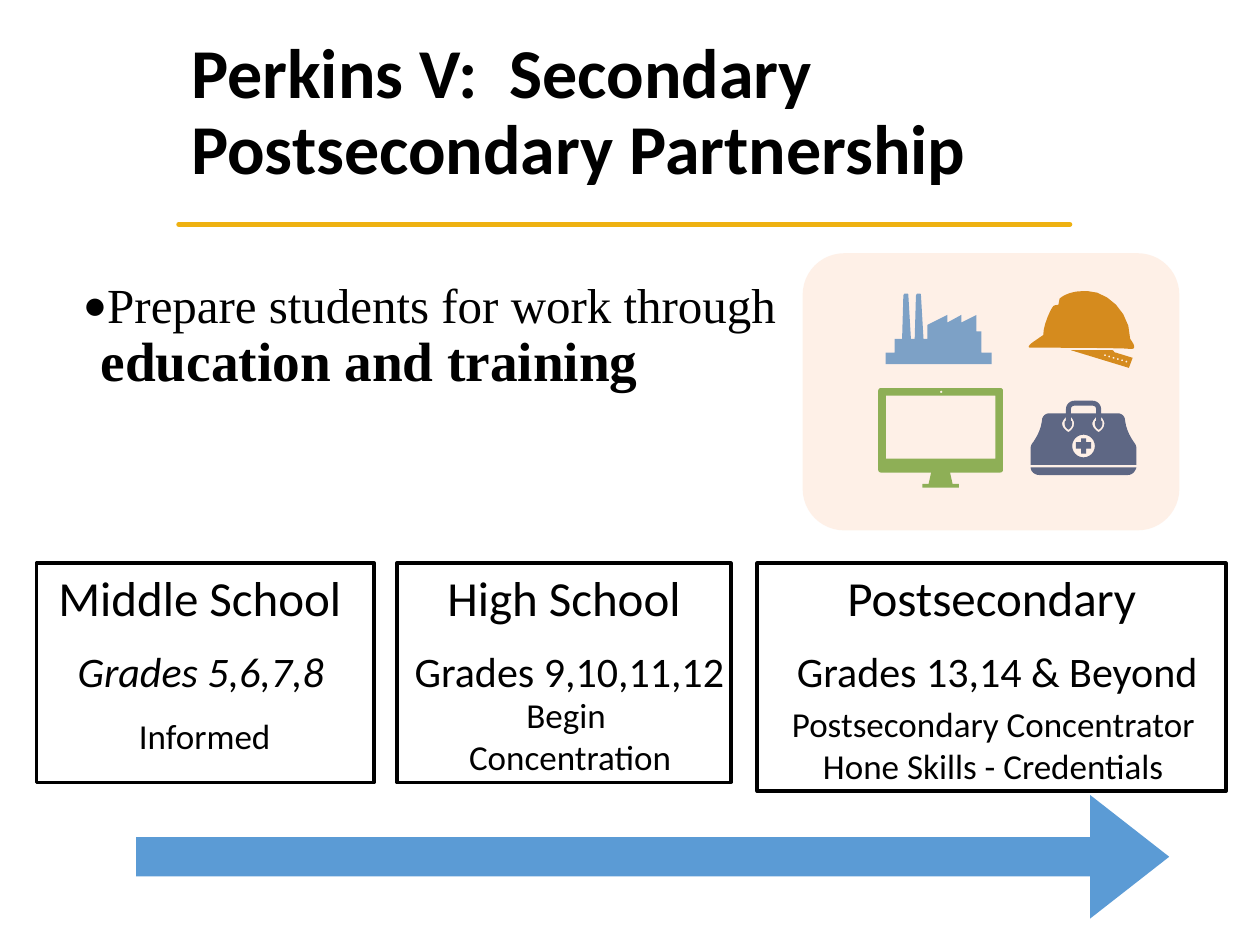
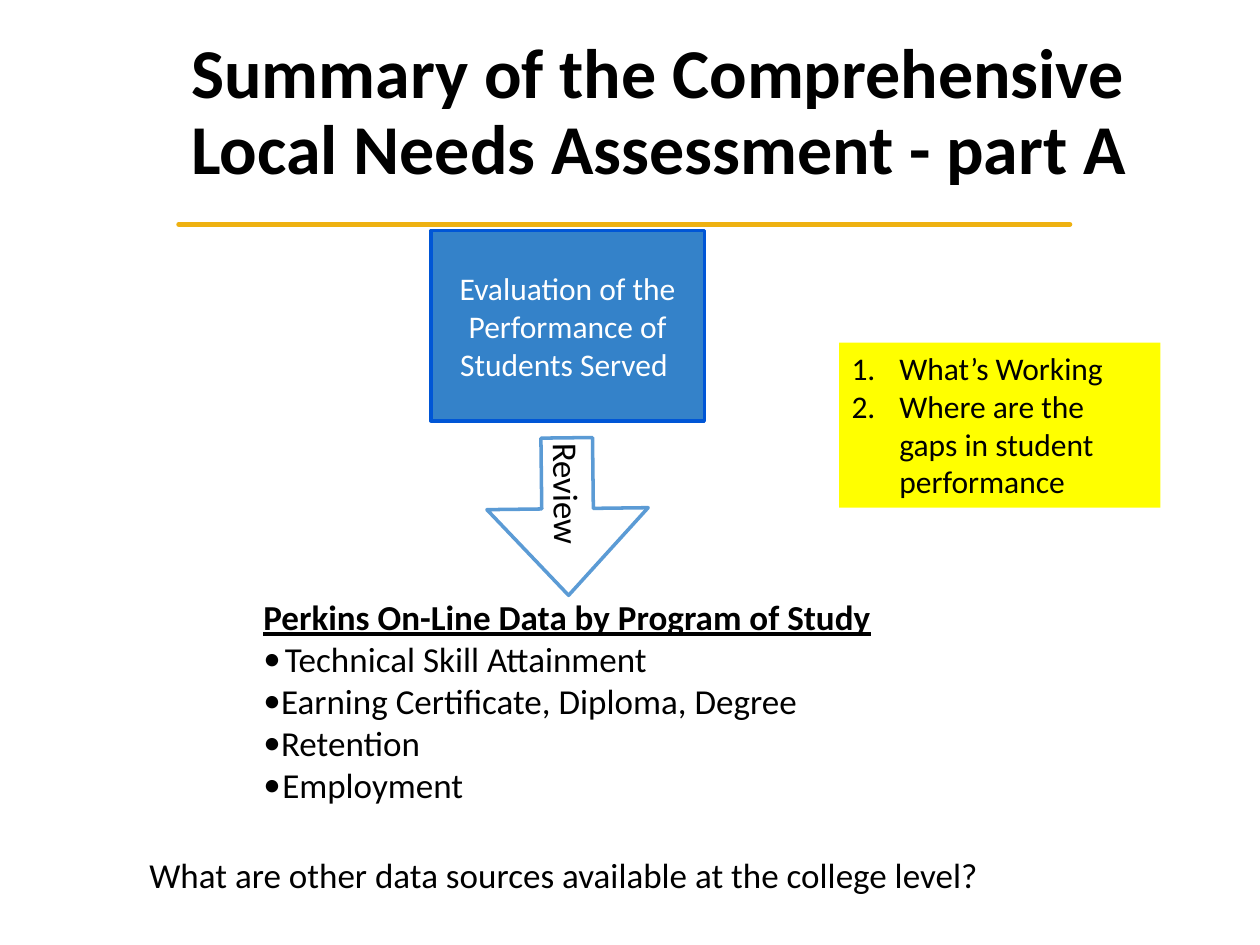
from dataclasses import dataclass
from math import cos, pi, sin
from typing import NamedTuple

from lxml.etree import SubElement
from pptx import Presentation
from pptx.dml.color import RGBColor
from pptx.enum.shapes import MSO_CONNECTOR as Connector, MSO_SHAPE as Preset
from pptx.enum.text import MSO_ANCHOR as Anchor, MSO_AUTO_SIZE as AutoSize, PP_ALIGN as Align
from pptx.oxml.ns import qn
from pptx.util import Inches, Pt


@dataclass(frozen=True)
class Theme:
    sans: str = "Calibri"
    serif: str = "Times New Roman"
    black: str = "000000"
    white: str = "FFFFFF"
    gold: str = "EEB111"
    blue: str = "5B9BD5"
    card: str = "3482C9"
    card_edge: str = "0056D6"
    yellow: str = "FFFF00"
    peach: str = "FEBB92"
    navy: str = "345181"
    orange: str = "CB7F00"
    green: str = "70AD47"
    title: float = 40
    strong: float = 31.6
    heading: float = 28
    grades: float = 24
    body: float = 20
    note: float = 18


THEME = Theme()
TIGHT = 0.04


class Box(NamedTuple):
    left: float
    top: float
    width: float
    height: float


@dataclass(frozen=True)
class Span:
    text: str
    size: float = THEME.body
    bold: bool = False
    italic: bool = False
    underline: bool = False
    color: str = THEME.black
    font: str = THEME.sans


@dataclass(frozen=True)
class Para:
    spans: tuple[Span, ...]
    align: Align = Align.LEFT
    hanging: float = 0
    bullet: str = ""
    spacing: float | None = None


@dataclass(frozen=True)
class Stage:
    frame: Box
    name: str
    name_left: float
    name_width: float
    grades: tuple[Span, ...]
    grades_left: float
    grades_width: float
    goals: tuple[str, ...]
    goals_box: Box
    goals_wrap: bool = False


# A contour starts with a point; 2 numbers draw a line, 6 a Bézier curve (hundredths of an inch)
Contour = list[tuple[float, ...]]


@dataclass(frozen=True)
class Icon:
    color: str
    contours: list[Contour]


def place(box: Box) -> list:
    return [Inches(length) for length in box]


def centred(*lines: Span) -> list[Para]:
    return [Para((line,), Align.CENTER) for line in lines]


def write(frame, paras: list[Para], anchor=Anchor.MIDDLE, inset: float | None = TIGHT,
          wrap: bool = True, grow: bool = False) -> None:
    frame.word_wrap = wrap
    frame.auto_size = AutoSize.SHAPE_TO_FIT_TEXT if grow else AutoSize.NONE
    frame.vertical_anchor = anchor
    if inset is not None:
        frame.margin_left = frame.margin_right = Inches(inset)
        frame.margin_top = frame.margin_bottom = Inches(inset)
    for index, item in enumerate(paras):
        para = frame.paragraphs[0] if index == 0 else frame.add_paragraph()
        if item.bullet:
            props = para._p.get_or_add_pPr()
            props.set("marL", str(Inches(item.hanging)))
            props.set("indent", str(-Inches(item.hanging)))
            if item.bullet == "1.":
                SubElement(props, qn("a:buAutoNum"), type="arabicPeriod")
            else:
                SubElement(props, qn("a:buFont"), typeface=THEME.sans)
                SubElement(props, qn("a:buChar"), char=item.bullet)
        para.alignment = item.align
        if item.spacing:
            para.line_spacing = item.spacing
        for span in item.spans:
            run = para.add_run()
            run.text = span.text
            run.font.name, run.font.size = span.font, Pt(span.size)
            run.font.bold, run.font.italic = span.bold, span.italic
            run.font.underline = span.underline
            run.font.color.rgb = RGBColor.from_string(span.color)


def add_text(page, box: Box, paras: list[Para], **layout) -> None:
    write(page.shapes.add_textbox(*place(box)).text_frame, paras, **layout)


def paint(shape, fill: str = "", line: str = "") -> None:
    shape.shadow.inherit = False
    if fill:
        shape.fill.solid()
        shape.fill.fore_color.rgb = RGBColor.from_string(fill)
    else:
        shape.fill.background()
    if line:
        shape.line.color.rgb = RGBColor.from_string(line)
        shape.line.width = Pt(2)
    else:
        shape.line.fill.background()


def add_preset(page, preset: Preset, box: Box, fill: str = "", line: str = "",
               adjust: tuple[float, ...] = ()):
    shape = page.shapes.add_shape(preset, *place(box))
    for index, value in enumerate(adjust):
        shape.adjustments[index] = value
    paint(shape, fill, line)
    return shape


def flatten(contour: Contour, steps: int = 6) -> list[tuple[float, float]]:
    points = [contour[0]]
    for part in contour[1:]:
        if len(part) == 2:
            points.append(part)
            continue
        start = points[-1]
        for step in range(1, steps + 1):
            t = step / steps
            weights = ((1 - t) ** 3, 3 * t * (1 - t) ** 2, 3 * t * t * (1 - t), t ** 3)
            corners = (start, part[:2], part[2:4], part[4:])
            points.append(tuple(sum(w * c[axis] for w, c in zip(weights, corners))
                                for axis in (0, 1)))
    return [(Inches(x / 100), Inches(y / 100)) for x, y in points]


def circle(x: float, y: float, radius: float, sides: int = 24) -> Contour:
    return [(x + radius * cos(2 * pi * n / sides), y + radius * sin(2 * pi * n / sides))
            for n in range(sides)]


def handle_loop(x: float) -> Contour:
    return [(x - 2, 331), (x - 2, 334), (x - 3, 334, x - 3, 335, x - 3, 336),
            (x - 3, 338, x - 2, 340, x, 341), (x + 2, 340, x + 3, 338, x + 3, 336),
            (x + 3, 335, x + 3, 334, x + 2, 334), (x + 2, 331),
            (x + 4, 333, x + 4.5, 335, x + 4.5, 336), (x + 4.5, 339, x + 3, 341, x, 343),
            (x - 3, 341, x - 5, 339, x - 5, 336), (x - 5, 335, x - 4, 333, x - 2, 331)]


def add_icon(page, icon: Icon) -> None:
    first, *others = [flatten(contour) for contour in icon.contours]
    builder = page.shapes.build_freeform(*first[0])
    builder.add_line_segments(first[1:])
    for points in others:
        builder.move_to(*points[0])
        builder.add_line_segments(points[1:])
    paint(builder.convert_to_shape(), icon.color)


def add_page(deck, title: str):
    """Blank page with the shared gold rule and title."""
    page = deck.slides.add_slide(deck.slide_layouts[6])
    rule = page.shapes.add_connector(Connector.STRAIGHT, Inches(1.42), Inches(1.78),
                                     Inches(8.49), Inches(1.78))
    rule.line.color.rgb = RGBColor.from_string(THEME.gold)
    rule.line.width = Pt(3)
    props = rule._element.spPr
    props.find(qn("a:ln")).set("cap", "rnd")
    SubElement(props, qn("a:effectLst"))
    add_text(page, Box(1.42, 0.18, 8.05, 1.45),
             [Para((Span(title, THEME.title, bold=True),), spacing=0.9)], inset=None)
    return page


STAGES = [
    Stage(Box(0.29, 4.47, 2.68, 1.74), "Middle School ", 0.41, 2.44,
          (Span("Grades 5,6,7,8", THEME.grades, italic=True), Span(" ")), 0.57, 2.11,
          ("Informed",), Box(1.06, 5.63, 1.13, 0.42)),
    Stage(Box(3.15, 4.47, 2.65, 1.74), "High School ", 3.5, 2.04,
          (Span("Grades 9,10,11,12", THEME.grades),), 3.24, 2.56,
          ("Begin ", "Concentration"), Box(3.64, 5.46, 1.77, 0.75), True),
    Stage(Box(6.01, 4.47, 3.72, 1.81), "Postsecondary ", 6.67, 2.49,
          (Span("Grades 13,14 & Beyond", THEME.grades),), 6.27, 3.29,
          ("Postsecondary Concentrator ", "Hone Skills - Credentials "),
          Box(6.23, 5.53, 3.37, 0.75)),
]

MEDICAL_BAG = Icon(THEME.navy, [
    [(853, 318), (849, 318, 846, 321, 846, 325), (846, 328), (833, 328),
     (830, 328, 827, 330, 827, 334), (826, 342, 822, 348, 820, 351),
     (819, 352, 818, 354, 818, 356), (818, 369), (902, 369), (902, 356),
     (902, 354, 901, 352, 900, 351), (898, 348, 894, 342, 893, 334),
     (893, 330, 890, 328, 887, 328), (874, 328), (874, 325), (874, 321, 871, 318, 867, 318)],
    [(853, 322), (867, 322), (869, 322, 870, 323, 870, 325), (870, 328), (850, 328),
     (850, 325), (850, 323, 851, 322, 853, 322)],
    handle_loop(848), handle_loop(872), circle(860, 354, 9),
    [(858, 348), (858, 351), (854, 351), (854, 356), (858, 356), (858, 360),
     (862, 360), (862, 356), (866, 356), (866, 351), (862, 351), (862, 348)],
    [(818, 371), (818, 374, 821, 377, 825, 377), (895, 377), (899, 377, 901, 374, 902, 371)],
])
HARD_HAT = Icon(THEME.orange, [
    [(860, 231), (847, 231, 841, 237, 841, 237), (840, 242), (840, 242, 837, 242, 836, 243),
     (834, 245, 828, 258, 828, 266), (825, 268, 819, 272, 818, 273),
     (816, 275, 816, 276, 818, 276), (823, 276, 895, 276, 898, 277),
     (902, 277, 900, 273, 897, 269), (897, 247, 878, 231, 863, 231)],
    [(850, 278), (896, 292), (899, 284), (899, 284, 889, 281, 886, 280),
     (884, 280, 884, 278, 883, 278)],
    *[circle(877 + 3.4 * n, 282 + n, 0.8, 8) for n in range(6)],
])
FACTORY = Icon(THEME.blue, [
    [(718, 233), (718, 233, 717, 234, 717, 235), (716, 269), (710, 269), (710, 280),
     (703, 280), (703, 289), (787, 289), (787, 280), (779, 280), (779, 263), (775, 263),
     (775, 250), (763, 256), (763, 250), (752, 256), (752, 250), (736, 258), (736, 269),
     (733, 269), (731, 235), (731, 234, 731, 233, 730, 233), (728, 233),
     (728, 233, 727, 234, 727, 235), (726, 269), (723, 269), (721, 235),
     (721, 234, 721, 233, 720, 233)],
])
MONITOR = Icon(THEME.green, [
    [(699, 308), (698, 308, 697, 309, 697, 310), (697, 373), (697, 374, 698, 375, 699, 375),
     (739, 375), (737, 384), (732, 384), (732, 387), (761, 387), (761, 384), (756, 384),
     (754, 375), (794, 375), (795, 375, 796, 374, 796, 373), (796, 310),
     (796, 309, 795, 308, 794, 308)],
    circle(747, 311, 1, 8),
    [(703, 314), (790, 314), (790, 364), (703, 364)],
])


def build_partnership(deck) -> None:
    page = add_page(deck, "Perkins V:  Secondary Postsecondary Partnership")
    add_text(page, Box(0.56, 2.18, 6.19, 1.81), [Para((
        Span("Prepare students for work through ", THEME.heading, font=THEME.serif),
        Span("education and training", THEME.strong, bold=True, font=THEME.serif),
    ), hanging=0.14, bullet="•", spacing=0.9)], anchor=Anchor.TOP, inset=None)
    add_preset(page, Preset.RIGHT_ARROW, Box(1.08, 6.31, 8.2, 0.98), THEME.blue,
               adjust=(0.32, 0.64))

    # School stages
    for stage in STAGES:
        add_preset(page, Preset.RECTANGLE, stage.frame, line=THEME.black)
        add_text(page, Box(stage.name_left, 4.46, stage.name_width, 0.55),
                 centred(Span(stage.name, THEME.heading)), wrap=False, grow=True)
        add_text(page, Box(stage.grades_left, 5.08, stage.grades_width, 0.48),
                 [Para(stage.grades, Align.CENTER)], wrap=False, grow=True)
        add_text(page, stage.goals_box, centred(*map(Span, stage.goals)),
                 wrap=stage.goals_wrap, grow=True)

    # Career icons under a translucent panel
    for icon in (MEDICAL_BAG, HARD_HAT, FACTORY, MONITOR):
        add_icon(page, icon)
    panel = add_preset(page, Preset.ROUNDED_RECTANGLE, Box(6.37, 2.01, 2.99, 2.2),
                       THEME.peach, adjust=(0.15,))
    tint = panel._element.spPr.find(qn("a:solidFill"))[0]
    SubElement(tint, qn("a:alpha"), val="21000")


def build_assessment(deck) -> None:
    page = add_page(deck, "Summary of the Comprehensive Local Needs Assessment - part A")
    card = add_preset(page, Preset.RECTANGLE, Box(3.42, 1.83, 2.17, 1.51), THEME.card,
                      THEME.card_edge)
    write(card.text_frame, centred(Span("Evaluation of the Performance of Students Served ",
                                        THEME.note, color=THEME.white)))

    # Data list and closing question
    measures = [("Technical Skill Attainment", 0.17),
                ("Earning Certificate, Diploma, Degree", 0.14),
                ("Retention", 0.14), ("Employment", 0.15)]
    heading = Span("Perkins On-Line Data by Program of Study", bold=True, underline=True)
    add_text(page, Box(2.05, 4.68, 4.95, 1.76), [Para((heading,))] + [
        Para((Span(text),), hanging=hanging, bullet="•") for text, hanging in measures],
        grow=True)
    add_text(page, Box(1.1, 6.73, 6.81, 0.42), centred(
        Span("What are other data sources available at the college level? ")), grow=True)

    # Numbered note
    note = add_preset(page, Preset.RECTANGLE, Box(6.66, 2.72, 2.55, 1.31), THEME.yellow)
    write(note.text_frame, [
        Para((Span(text, THEME.note),), hanging=0.38, bullet="1.")
        for text in ("What’s Working", "Where are the gaps in student performance")],
        anchor=Anchor.TOP, inset=None, grow=True)

    # Review arrow
    arrow = add_preset(page, Preset.RIGHT_ARROW, Box(3.88, 3.46, 1.25, 1.28), THEME.white,
                       THEME.blue, (0.32, 0.55))
    arrow.rotation = 89.3
    write(arrow.text_frame, [Para((Span("Review"),))])


def main() -> None:
    deck = Presentation()
    deck.slide_width, deck.slide_height = Inches(10), Inches(7.5)
    build_partnership(deck)
    build_assessment(deck)
    deck.save("out.pptx")


if __name__ == "__main__":
    main()
